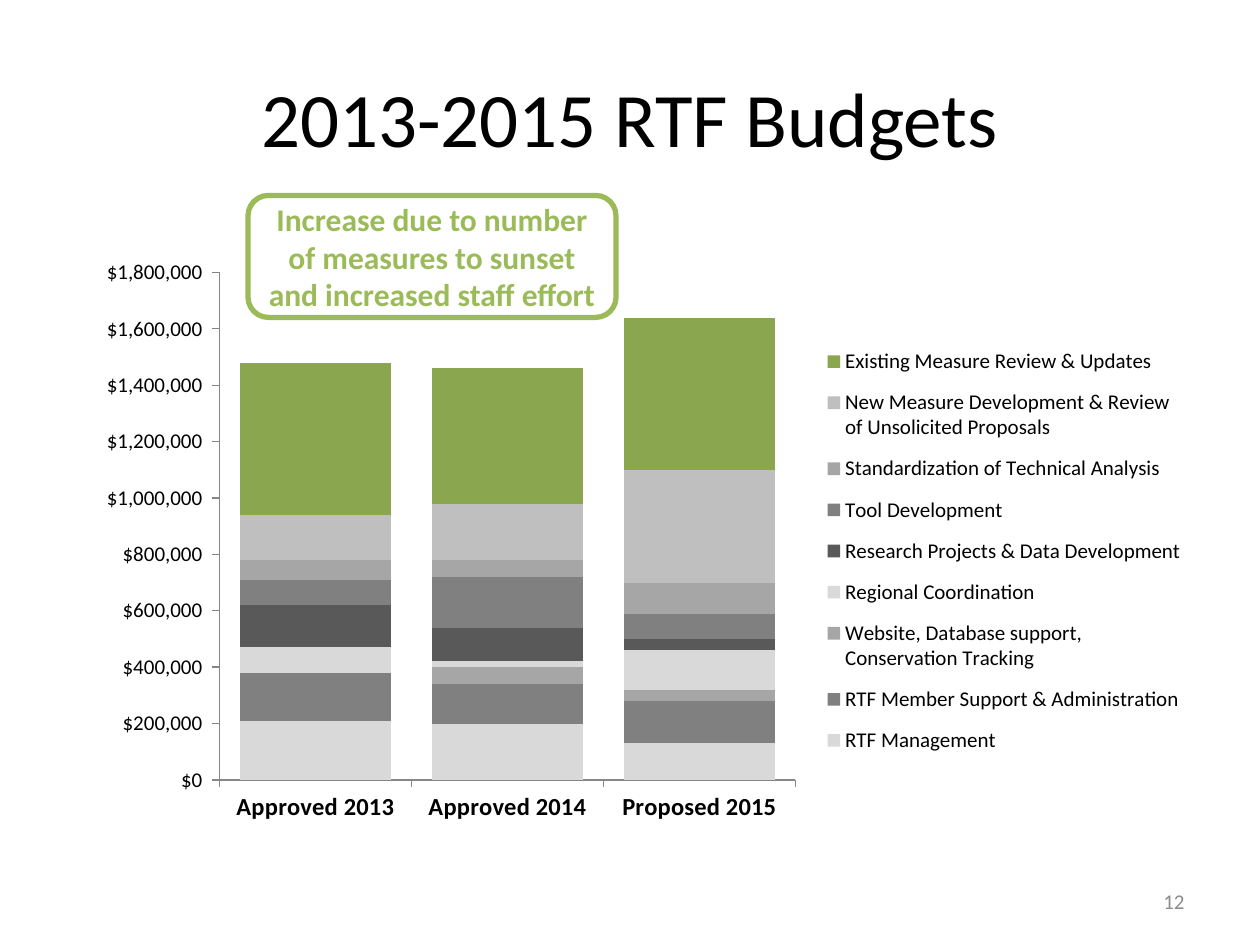
from lxml.etree import SubElement
from pptx import Presentation
from pptx.chart.data import CategoryChartData
from pptx.dml.color import RGBColor
from pptx.enum.chart import XL_CHART_TYPE as ChartType
from pptx.enum.chart import XL_LEGEND_POSITION as LegendPosition
from pptx.enum.chart import XL_TICK_MARK as TickMark
from pptx.enum.shapes import MSO_SHAPE as Shape
from pptx.enum.text import MSO_ANCHOR as Anchor
from pptx.enum.text import PP_ALIGN as Align
from pptx.oxml.ns import qn
from pptx.util import Cm, Pt

BLACK = RGBColor(0x00, 0x00, 0x00)
NUMBER_GRAY = RGBColor(0x8C, 0x8C, 0x8C)
AXIS_GRAY = RGBColor(0x86, 0x86, 0x86)
PALE = RGBColor(0xD9, 0xD9, 0xD9)
LIGHT = RGBColor(0xBF, 0xBF, 0xBF)
MEDIUM = RGBColor(0xA6, 0xA6, 0xA6)
GRAY = RGBColor(0x80, 0x80, 0x80)
DARK = RGBColor(0x59, 0x59, 0x59)
GREEN = RGBColor(0x9B, 0xBB, 0x59)
BAR_GREEN = RGBColor(0x8A, 0xA6, 0x4F)

YEARS = ["Approved 2013", "Approved 2014", "Proposed 2015"]
BUDGETS = [
    ("RTF Management", (210000, 200000, 130000), PALE),
    ("RTF Member Support & Administration", (170000, 140000, 150000), GRAY),
    ("Website, Database support, Conservation Tracking", (0, 60000, 40000), MEDIUM),
    ("Regional Coordination", (90000, 20000, 140000), PALE),
    ("Research Projects & Data Development", (150000, 120000, 40000), DARK),
    ("Tool Development", (90000, 180000, 90000), GRAY),
    ("Standardization of Technical Analysis", (70000, 60000, 110000), MEDIUM),
    ("New Measure Development & Review of Unsolicited Proposals",
     (160000, 200000, 400000), LIGHT),
    ("Existing Measure Review & Updates", (540000, 480000, 540000), BAR_GREEN),
]


def format_font(font, size, color=BLACK, bold=False):
    font.name = "Calibri"
    font.size = Pt(size)
    font.bold = bold
    font.color.rgb = color


def write_text(box, text, size, color=BLACK, bold=False, align=Align.CENTER):
    frame = box.text_frame
    frame.word_wrap = True
    frame.vertical_anchor = Anchor.MIDDLE
    para = frame.paragraphs[0]
    para.alignment = align
    span = para.add_run()
    span.text = text
    format_font(span.font, size, color, bold)


def set_layout(parent, index, inner=False, **bounds):
    for old in parent.findall(qn("c:layout")):
        parent.remove(old)
    layout = SubElement(parent, qn("c:layout"))
    parent.insert(index, layout)
    manual = SubElement(layout, qn("c:manualLayout"))
    settings = {"layoutTarget": "inner"} if inner else {}
    settings.update(xMode="edge", yMode="edge", **bounds)
    for name, value in settings.items():
        SubElement(manual, qn(f"c:{name}")).set("val", str(value))


class BudgetSlide:
    def __init__(self, deck):
        self.page = deck.slides.add_slide(deck.slide_layouts[5])

    def title(self, text, *bounds):
        box = self.page.shapes.title
        box.left, box.top, box.width, box.height = map(Cm, bounds)
        write_text(box, text, 44)

    def label(self, text, *bounds):
        box = self.page.shapes.add_textbox(*map(Cm, bounds))
        write_text(box, text, 12, color=NUMBER_GRAY, align=Align.RIGHT)

    def callout(self, text, *bounds):
        box = self.page.shapes.add_shape(Shape.ROUNDED_RECTANGLE, *map(Cm, bounds))
        box.shadow.inherit = False
        box.fill.background()
        box.line.color.rgb = GREEN
        box.line.width = Pt(3)
        write_text(box, text, 18, color=GREEN, bold=True)

    def stacked_chart(self, *bounds):
        data = CategoryChartData()
        data.categories = YEARS
        for name, values, _ in BUDGETS:
            data.add_series(name, values)
        frame = self.page.shapes.add_chart(
            ChartType.COLUMN_STACKED, *map(Cm, bounds), data)
        chart = frame.chart
        chart.has_title = False
        format_font(chart.font, 10)
        plot = chart.plots[0]
        plot.gap_width = 27
        plot.overlap = 100
        plot.vary_by_categories = False
        for series, (_, _, color) in zip(plot.series, BUDGETS):
            series.format.fill.solid()
            series.format.fill.fore_color.rgb = color
        self.axis(chart.category_axis, 14, bold=True)
        self.axis(chart.value_axis, 12)
        chart.value_axis.minimum_scale = 0
        chart.value_axis.maximum_scale = 1800000
        chart.value_axis.major_unit = 200000
        labels = chart.value_axis.tick_labels
        labels.number_format = r'"$"#,##0_);\("$"#,##0\)'
        labels.number_format_is_linked = False
        self.legend(chart)
        area = chart.element.xpath(".//c:plotArea")[0]
        set_layout(area, 0, inner=True, x=0.138, y=0.083, w=0.508, h=0.814)

    def axis(self, axis, size, bold=False):
        axis.has_major_gridlines = False
        axis.major_tick_mark = TickMark.OUTSIDE
        axis.minor_tick_mark = TickMark.NONE
        axis.format.line.color.rgb = AXIS_GRAY
        axis.format.line.width = Pt(0.75)
        format_font(axis.tick_labels.font, size, bold=bold)

    def legend(self, chart):
        chart.has_legend = True
        chart.legend.position = LegendPosition.RIGHT
        chart.legend.include_in_layout = False
        format_font(chart.legend.font, 12)
        legend = chart.element.xpath(".//c:legend")[0]
        set_layout(legend, 1, x=0.67, y=0.18, w=0.32, h=0.7)


def main():
    deck = Presentation()
    deck.slide_width, deck.slide_height = Cm(25.4), Cm(19.05)
    slide = BudgetSlide(deck)
    slide.title("2013-2015 RTF Budgets", 1.27, 0.76, 22.86, 3.18)
    slide.label("12", 18.2, 17.66, 5.93, 1.01)
    slide.callout("Increase due to number of measures to sunset "
                  "and increased staff effort", 5, 3.94, 7.42, 2.46)
    slide.stacked_chart(1.27, 4.45, 22.86, 12.57)
    deck.save("out.pptx")


if __name__ == "__main__":
    main()
